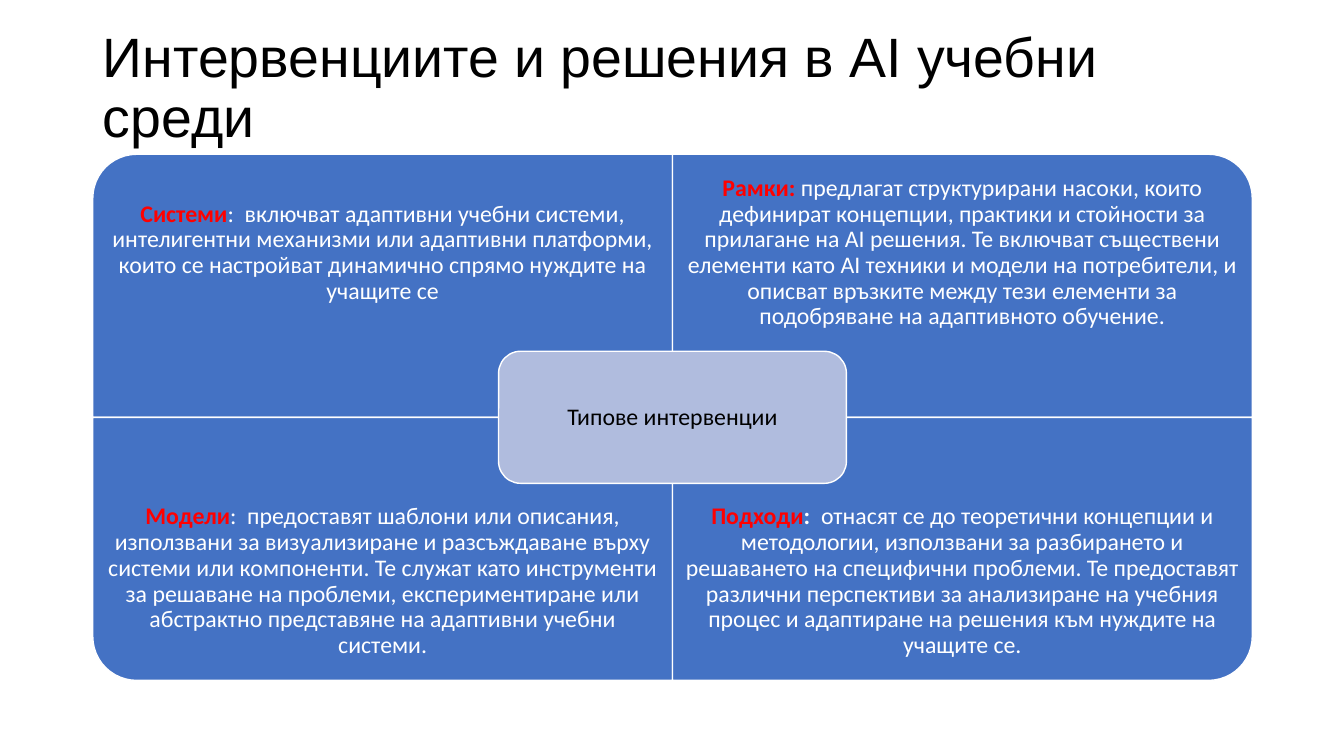
"""Build a slide with four kinds of interventions around a central label."""
from pptx import Presentation
from pptx.dml.color import RGBColor
from pptx.enum.shapes import MSO_SHAPE
from pptx.enum.text import MSO_ANCHOR, PP_ALIGN
from pptx.util import Inches, Pt

WHITE, BLACK, RED, BLUE, LILAC = "FFFFFF", "000000", "FF0000", "4472C4", "B0BCDE"
LEFT, TOP, WIDTH, HEIGHT = 0.92, 1.53, 5.75, 2.61
TEXT_HEIGHT = 1.96


def add_panel(page, kind, center_x, center_y, width, height, fill):
    panel = page.shapes.add_shape(
        kind, Inches(center_x - width / 2), Inches(center_y - height / 2), Inches(width), Inches(height))
    panel.shadow.inherit = False
    panel.fill.solid()
    panel.fill.fore_color.rgb = RGBColor.from_string(fill)
    panel.line.color.rgb = RGBColor.from_string(WHITE)
    panel.line.width = Pt(1)
    return panel


def add_text(page, left, top, width, height, inset, spans):
    frame = page.shapes.add_textbox(Inches(left), Inches(top), Inches(width), Inches(height)).text_frame
    frame.word_wrap = True
    frame.vertical_anchor = MSO_ANCHOR.MIDDLE
    frame.margin_left = frame.margin_right = frame.margin_top = frame.margin_bottom = Inches(inset)
    para = frame.paragraphs[0]
    para.alignment = PP_ALIGN.CENTER
    para.line_spacing = 0.9
    para.font.name = "Calibri"
    para.font.size = Pt(17)
    for text, color, bold in spans:
        span = para.add_run()
        span.text = text
        span.font.name = "Calibri"
        span.font.size = Pt(17)
        span.font.bold = bold
        span.font.color.rgb = RGBColor.from_string(color)


deck = Presentation()
deck.slide_width, deck.slide_height = Inches(13.33), Inches(7.5)
page = deck.slides.add_slide(deck.slide_layouts[5])

title = page.shapes.title
title.left, title.top, title.width, title.height = Inches(0.92), Inches(0.4), Inches(11.5), Inches(0.97)
title.text_frame.text = "Интервенциите и решения в AI учебни среди"
title.text_frame.vertical_anchor = MSO_ANCHOR.MIDDLE
heading = title.text_frame.paragraphs[0]
heading.alignment = PP_ALIGN.LEFT
heading.line_spacing = 0.9
heading.font.name = "Arial"
heading.font.size = Pt(39.6)
heading.font.color.rgb = RGBColor.from_string(BLACK)

quadrants = [
    (0, 0, 270, [
        ("Системи", RED, True),
        (":  включват адаптивни учебни системи, интелигентни механизми или адаптивни платформи, "
         "които се настройват динамично спрямо нуждите на учащите се", WHITE, False)]),
    (1, 0, 0, [
        ("Рамки:", RED, True),
        (" предлагат структурирани насоки, които дефинират концепции, практики и стойности за "
         "прилагане на AI решения. Те включват съществени елементи като AI техники и модели на "
         "потребители, и описват връзките между тези елементи за подобряване на адаптивното "
         "обучение.", WHITE, False)]),
    (0, 1, 180, [
        ("Модели", RED, True),
        (":  предоставят шаблони или описания, използвани за визуализиране и разсъждаване върху "
         "системи или компоненти. Те служат като инструменти за решаване на проблеми, "
         "експериментиране или абстрактно представяне на адаптивни учебни системи.", WHITE, False)]),
    (1, 1, 90, [
        ("Подходи", RED, True),
        (": ", WHITE, True),
        (" отнасят се до теоретични концепции и методологии, използвани за разбирането и "
         "решаването на специфични проблеми. Те предоставят различни перспективи за анализиране "
         "на учебния процес и адаптиране на решения към нуждите на учащите се.", WHITE, False)]),
]
for column, row, rotation, spans in quadrants:
    left, top = LEFT + column * WIDTH, TOP + row * HEIGHT
    width, height = (HEIGHT, WIDTH) if rotation % 180 else (WIDTH, HEIGHT)
    panel = add_panel(page, MSO_SHAPE.ROUND_1_RECTANGLE, left + WIDTH / 2, top + HEIGHT / 2, width, height, BLUE)
    panel.rotation = rotation
    text_top = top + row * (HEIGHT - TEXT_HEIGHT)
    add_text(page, left, text_top, WIDTH, TEXT_HEIGHT, 0.13, spans)

add_panel(page, MSO_SHAPE.ROUNDED_RECTANGLE, LEFT + WIDTH, TOP + HEIGHT, 3.45, 1.31, LILAC)
add_text(page, 5.01, 3.55, 3.32, 1.18, 0.07, [("Типове интервенции", BLACK, False)])

deck.save("out.pptx")
